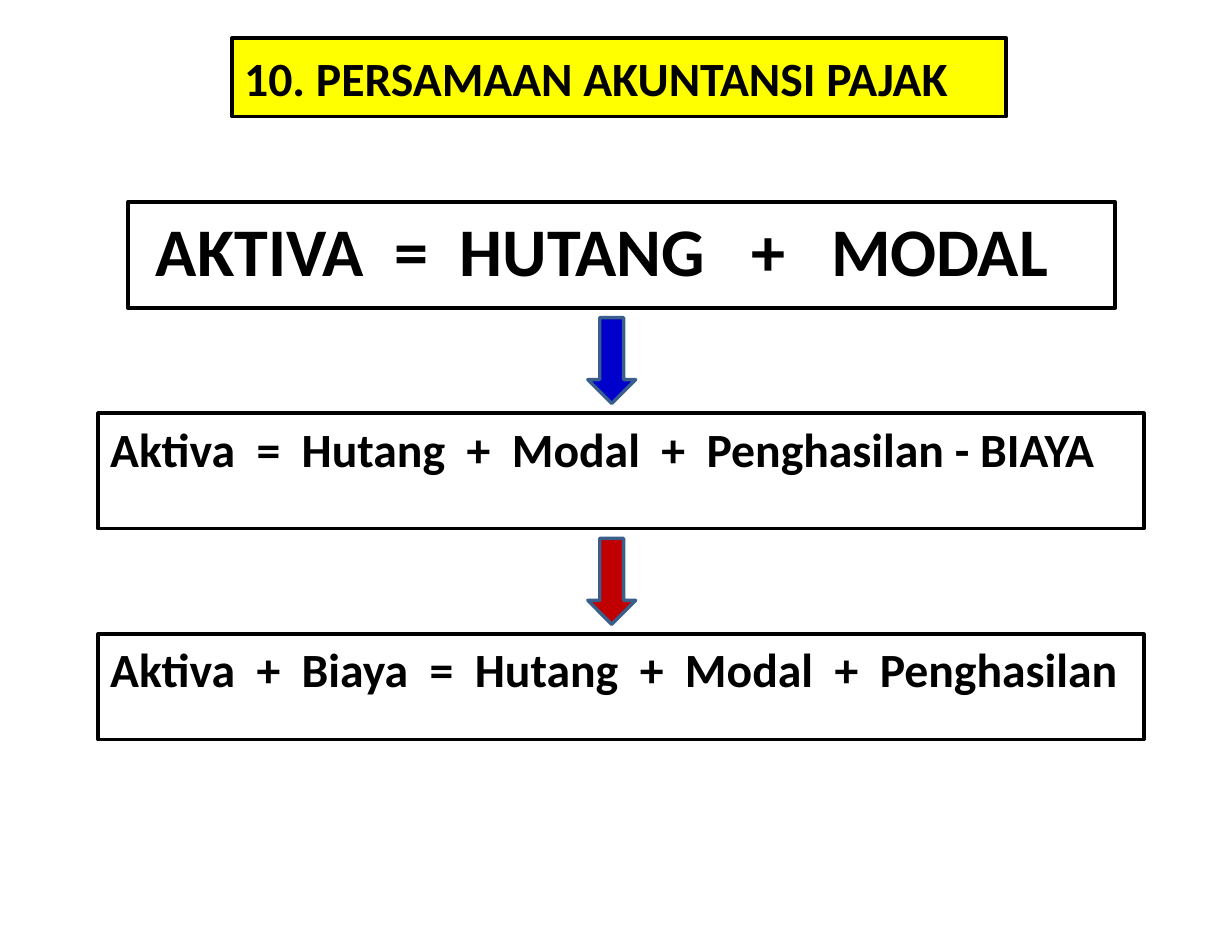
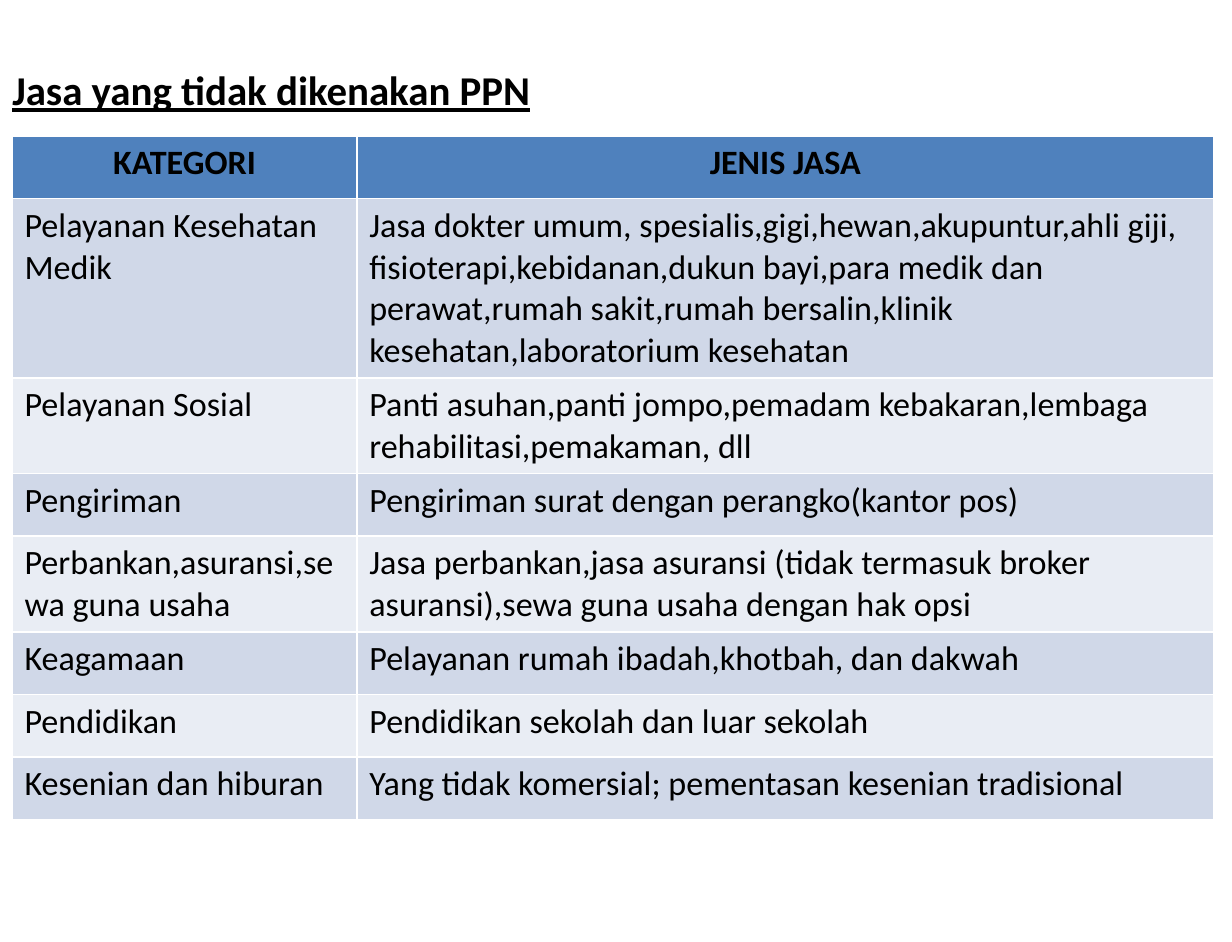
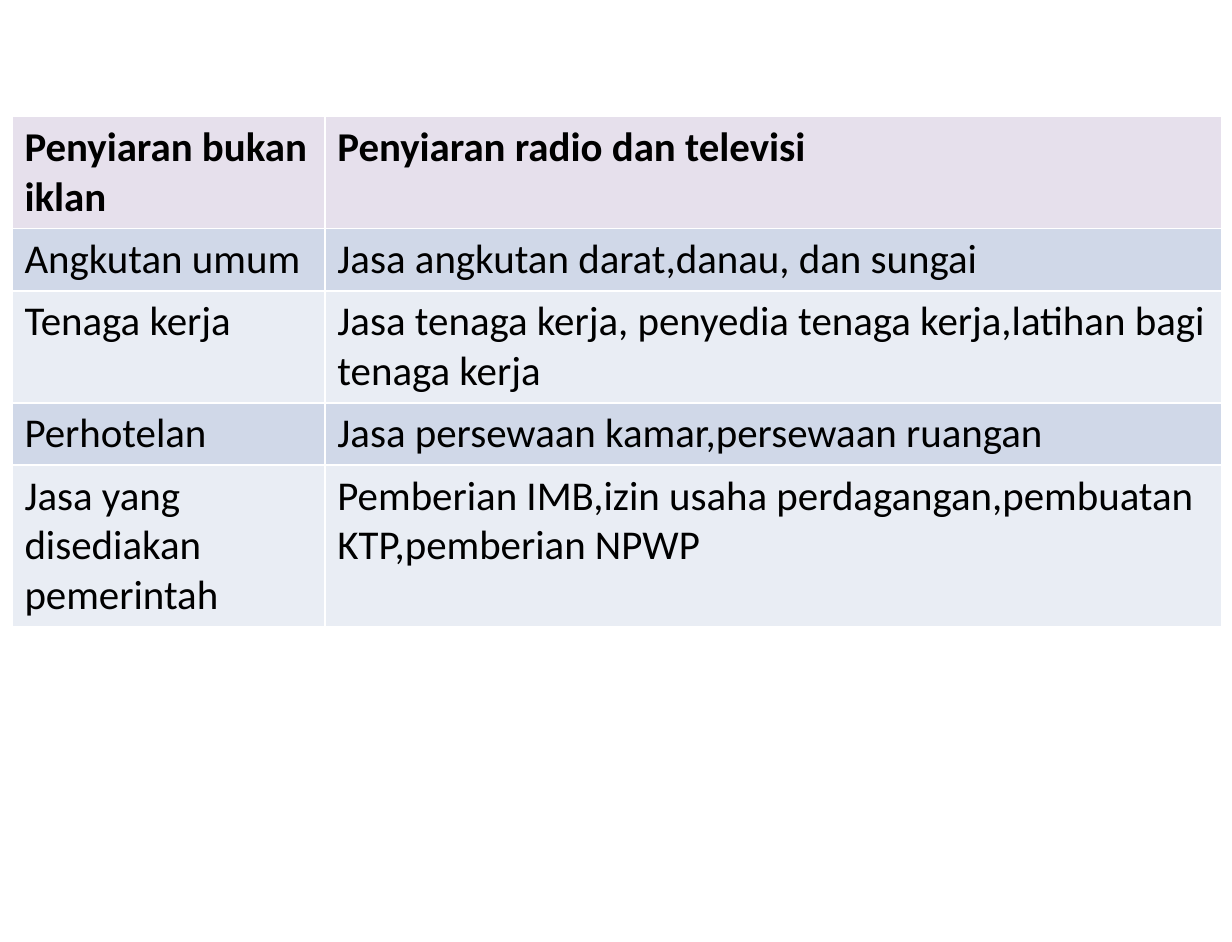
from itertools import repeat

from pptx import Presentation
from pptx.dml.color import RGBColor
from pptx.enum.shapes import MSO_SHAPE
from pptx.enum.text import MSO_ANCHOR, MSO_AUTO_SIZE, PP_ALIGN
from pptx.util import Inches, Pt

FONT = "Calibri"
COLORS = {
    "ink": "000000",
    "paper": "FFFFFF",
    "yellow": "FFFF00",
    "blue": "0000CC",
    "red": "C00000",
    "edge": "3A5F8C",
    "head": "4F81BD",
    "lilac": "E6E0EC",
    "dark": "D0D8E8",
    "light": "E9EDF4",
}
TITLE_ONLY, BLANK = 5, 6


def color(name):
    return RGBColor.from_string(COLORS[name])


def write(frame, text, size=28, bold=True, under=None, align=PP_ALIGN.LEFT,
          anchor=MSO_ANCHOR.TOP, after=0, gaps=repeat(6.3)):
    """Fill a text frame; each | is a space widened by the next of gaps, in points."""
    frame.word_wrap = True
    frame.auto_size = MSO_AUTO_SIZE.NONE
    frame.vertical_anchor = anchor
    wide = iter(gaps)
    for i, line in enumerate(text.split("\n")):
        para = frame.add_paragraph() if i else frame.paragraphs[0]
        para.alignment = align
        para.space_after = Pt(after)
        for part in line.replace("|", "\t|\t").split("\t"):
            run = para.add_run()
            run.text = " " if part == "|" else part
            font = run.font
            font.name, font.size, font.bold = FONT, Pt(size), bold
            font.underline = under
            font.color.rgb = color("ink")
            if part == "|":
                run._r.get_or_add_rPr().set("spc", str(round(next(wide) * 100)))


class Deck:
    def __init__(self, width, height):
        self.file = Presentation()
        self.file.slide_width = Inches(width)
        self.file.slide_height = Inches(height)
        self.slide = None

    def add(self, layout):
        self.slide = self.file.slides.add_slide(self.file.slide_layouts[layout])

    def paint(self, shape, fill, line, width):
        if fill:
            shape.fill.solid()
            shape.fill.fore_color.rgb = color(fill)
        else:
            shape.fill.background()
        shape.line.color.rgb = color(line)
        shape.line.width = Pt(width)

    def title(self, text, box, fill=None, **style):
        shape = self.slide.shapes.title
        shape.left, shape.top, shape.width, shape.height = map(Inches, box)
        if fill:
            self.paint(shape, fill, "ink", 2.25)
        write(shape.text_frame, text, **style)

    def shape(self, kind, box, fill, line="ink", width=2.25):
        shape = self.slide.shapes.add_shape(kind, *map(Inches, box))
        shape.shadow.inherit = False
        self.paint(shape, fill, line, width)
        return shape

    def panel(self, text, box, fill="paper", inset=0.1, **style):
        frame = self.shape(MSO_SHAPE.RECTANGLE, box, fill).text_frame
        frame.margin_left = Inches(inset)
        write(frame, text, **style)

    def arrow(self, top, fill):
        self.shape(MSO_SHAPE.DOWN_ARROW, (4.79, top, 0.39, 0.7), fill, "edge", 2)

    def table(self, rows, top, widths, step, head, size, align=PP_ALIGN.LEFT):
        """Draw rows with a bold first row and bands below it."""
        grid = self.slide.shapes.add_table(
            len(rows), len(widths), Inches(0.1), Inches(top),
            Inches(sum(widths)), Inches(step * len(rows))).table
        for col, width in zip(grid.columns, widths):
            col.width = Inches(width)
        for r, row in enumerate(rows):
            fill = ("dark" if r % 2 else "light") if r else head
            for c, text in enumerate(row):
                cell = grid.cell(r, c)
                cell.fill.solid()
                cell.fill.fore_color.rgb = color(fill)
                write(cell.text_frame, text, size=size, bold=r == 0,
                      align=PP_ALIGN.LEFT if r else align)


SERVICES = [
    ("KATEGORI", "JENIS JASA"),
    ("Pelayanan Kesehatan Medik",
     "Jasa dokter umum, spesialis,gigi,hewan,akupuntur,ahli giji,\n"
     "fisioterapi,kebidanan,dukun bayi,para medik dan perawat,rumah sakit,"
     "rumah bersalin,klinik kesehatan,laboratorium kesehatan"),
    ("Pelayanan Sosial",
     "Panti asuhan,panti jompo,pemadam kebakaran,lembaga "
     "rehabilitasi,pemakaman, dll"),
    ("Pengiriman", "Pengiriman surat dengan perangko(kantor pos)"),
    ("Perbankan,asuransi,sewa guna usaha",
     "Jasa perbankan,jasa asuransi (tidak termasuk broker "
     "asuransi),sewa guna usaha dengan hak opsi"),
    ("Keagamaan", "Pelayanan rumah ibadah,khotbah, dan dakwah"),
    ("Pendidikan", "Pendidikan sekolah dan luar sekolah"),
    ("Kesenian dan hiburan",
     "Yang tidak komersial; pementasan kesenian tradisional"),
]
OTHERS = [
    ("Penyiaran bukan iklan", "Penyiaran radio dan televisi"),
    ("Angkutan umum", "Jasa angkutan darat,danau, dan sungai"),
    ("Tenaga kerja",
     "Jasa tenaga kerja, penyedia tenaga kerja,latihan bagi tenaga kerja"),
    ("Perhotelan", "Jasa persewaan kamar,persewaan ruangan"),
    ("Jasa yang disediakan pemerintah",
     "Pemberian IMB,izin usaha perdagangan,pembuatan KTP,pemberian NPWP"),
]


def main():
    deck = Deck(10.04, 7.68)

    deck.add(TITLE_ONLY)
    deck.title("10. PERSAMAAN AKUNTANSI PAJAK", (1.89, 0.31, 6.31, 0.64),
               fill="yellow", anchor=MSO_ANCHOR.MIDDLE)
    deck.panel("AKTIVA|=|HUTANG|+|MODAL", (1.04, 1.65, 8.05, 0.86), fill=None,
               inset=0.23, size=40, gaps=(9, 9, 18, 18))
    deck.panel("Aktiva|=|Hutang|+|Modal|+|Penghasilan - BIAYA",
               (0.8, 3.37, 8.52, 0.94), after=10)
    deck.panel("Aktiva|+|Biaya|=|Hutang|+|Modal|+|Penghasilan",
               (0.8, 5.17, 8.52, 0.86), after=10)
    deck.arrow(2.59, "blue")
    deck.arrow(4.39, "red")

    deck.add(TITLE_ONLY)
    deck.title("Jasa yang tidak dikenakan PPN", (0, 0.48, 10.04, 0.55),
               size=24, under=True)
    deck.table(SERVICES, 1.11, (2.81, 6.98), 0.51, "head", 20,
               align=PP_ALIGN.CENTER)

    deck.add(BLANK)
    deck.table(OTHERS, 0.95, (2.55, 7.31), 0.41, "lilac", 24)

    deck.file.save("out.pptx")


if __name__ == "__main__":
    main()
